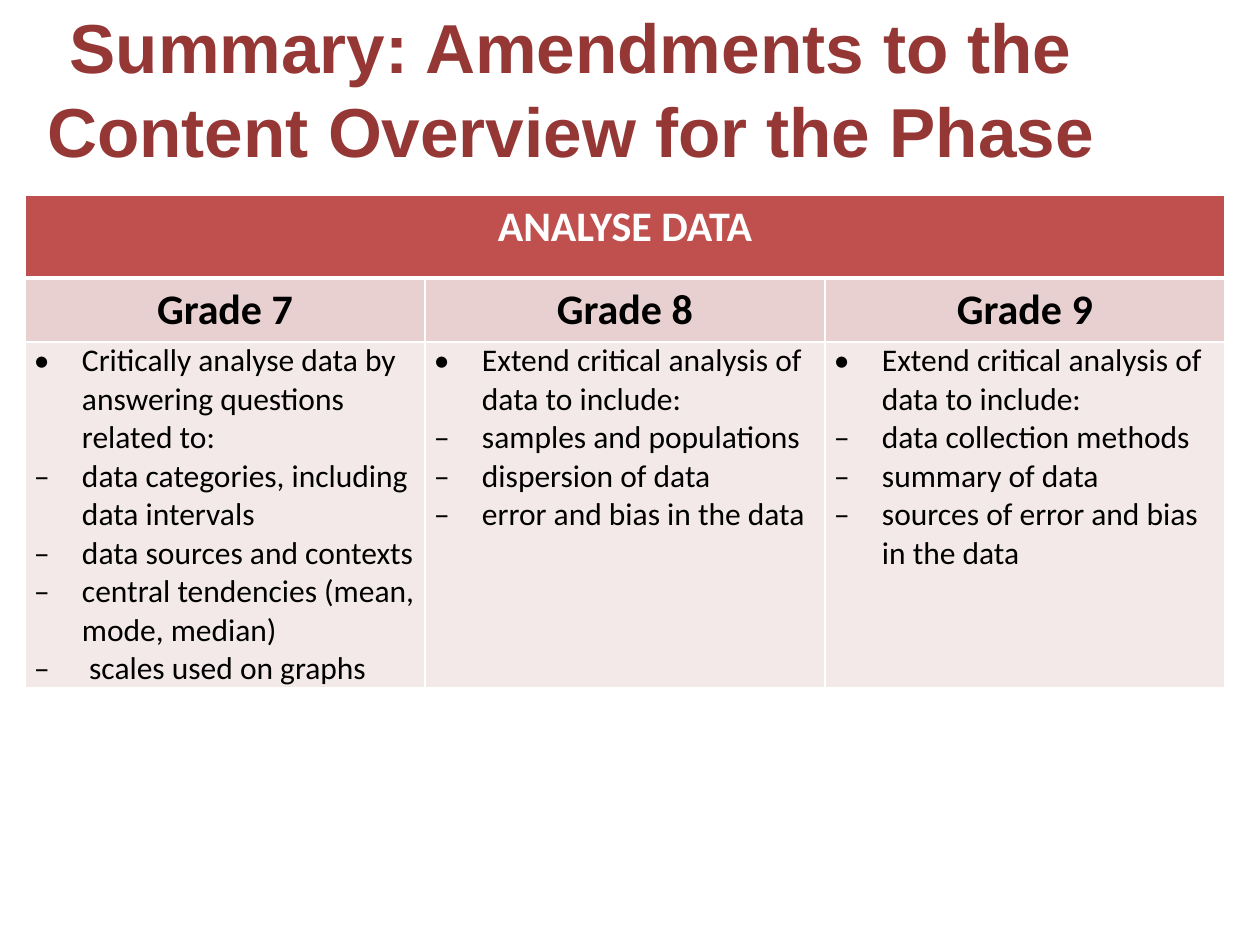
import lxml.etree
import pptx
import pptx.dml.color
import pptx.enum.text
import pptx.oxml.ns
import pptx.util

PX = 914400 / 126
TITLE = "Summary: Amendments to the Content Overview for the Phase"
HEADING = "ANALYSE DATA"
EXTEND = "Extend critical analysis of data to include:"
GRADES = {
    "Grade 7": ["Critically analyse data by answering questions related to:",
                "data categories, including data intervals",
                "data sources and contexts",
                "central tendencies (mean, mode, median)",
                " scales used on graphs"],
    "Grade 8": [EXTEND, "samples and populations", "dispersion of data",
                "error and bias in the data"],
    "Grade 9": [EXTEND, "data collection methods", "summary of data",
                "sources of error and bias in the data"],
}


def px(length):
    """Turn whole pixels into EMU."""
    return pptx.util.Emu(round(length * PX))


def colour(value):
    """Turn a hex string into a colour."""
    return pptx.dml.color.RGBColor.from_string(value)


def add_span(para, text, size, ink, bold=False, font="Calibri"):
    """Add one formatted run to a paragraph."""
    span = para.add_run()
    span.text = text
    span.font.name = font
    span.font.size = pptx.util.Pt(size)
    span.font.bold = bold
    span.font.color.rgb = colour(ink)


def add_child(parent, tag, **attributes):
    """Append a drawing element to its parent."""
    return lxml.etree.SubElement(parent, pptx.oxml.ns.qn(tag), attributes)


def style_cell(cell, fill, top=1, bottom=1):
    """Fill a cell and give it white borders with widths in points."""
    cell.fill.solid()
    cell.fill.fore_color.rgb = colour(fill)
    properties = cell._tc.get_or_add_tcPr()
    sides = {"a:lnL": 1, "a:lnR": 1, "a:lnT": top, "a:lnB": bottom}
    for place, (tag, width) in enumerate(sides.items()):
        line = add_child(properties, tag, w=str(pptx.util.Pt(width)))
        add_child(add_child(line, "a:solidFill"), "a:srgbClr", val="FFFFFF")
        properties.insert(place, line)


def add_heading(cell, text, ink):
    """Write a bold centred heading in a cell."""
    para = cell.text_frame.paragraphs[0]
    para.alignment = pptx.enum.text.PP_ALIGN.CENTER
    add_span(para, text, 24, ink, bold=True)


def add_list(cell, items):
    """Write a bulleted opening item followed by dashed items."""
    cell.margin_left = cell.margin_right = px(9)
    cell.margin_top = cell.margin_bottom = 0
    frame = cell.text_frame
    for index, item in enumerate(items):
        para = frame.add_paragraph() if index else frame.paragraphs[0]
        properties = para._p.get_or_add_pPr()
        properties.set("marL", str(px(48)))
        properties.set("indent", str(-px(48)))
        add_child(properties, "a:buFont", typeface="Calibri")
        add_child(properties, "a:buChar", char="‒" if index else "•")
        add_span(para, item, 18, "000000")


def place_title(page, left, top, width, height):
    """Place and write the slide title."""
    title = page.shapes.title
    title.left, title.top = px(left), px(top)
    title.width, title.height = px(width), px(height)
    frame = title.text_frame
    frame.word_wrap = True
    frame.auto_size = pptx.enum.text.MSO_AUTO_SIZE.NONE
    frame.vertical_anchor = pptx.enum.text.MSO_ANCHOR.MIDDLE
    para = frame.paragraphs[0]
    para.alignment = pptx.enum.text.PP_ALIGN.CENTER
    para.line_spacing = pptx.util.Pt(48)
    add_span(para, TITLE, 39.6, "953735", bold=True, font="Arial")


def place_table(page, left, top, width, heights):
    """Place the table with one column for each grade."""
    table = page.shapes.add_table(
        len(heights), len(GRADES), px(left), px(top), px(width), px(sum(heights))).table
    for row, height in zip(table.rows, heights):
        row.height = px(height)
    for column, (grade, items) in enumerate(GRADES.items()):
        table.columns[column].width = px(width / len(GRADES))
        style_cell(table.cell(0, column), "C0504D", bottom=3)
        style_cell(table.cell(1, column), "E8D0D0", top=3)
        style_cell(table.cell(2, column), "F4E9E9")
        add_heading(table.cell(1, column), grade, "000000")
        add_list(table.cell(2, column), items)
    table.cell(0, 0).merge(table.cell(0, len(GRADES) - 1))
    add_heading(table.cell(0, 0), HEADING, "FFFFFF")


def main():
    """Build and save the deck."""
    deck = pptx.Presentation()
    deck.slide_width, deck.slide_height = px(1260), px(945)
    page = deck.slides.add_slide(deck.slide_layouts[5])
    place_title(page, -15, 4, 1172, 166)
    place_table(page, 25, 195, 1200, [83, 64, 345])
    deck.save("out.pptx")


if __name__ == "__main__":
    main()
